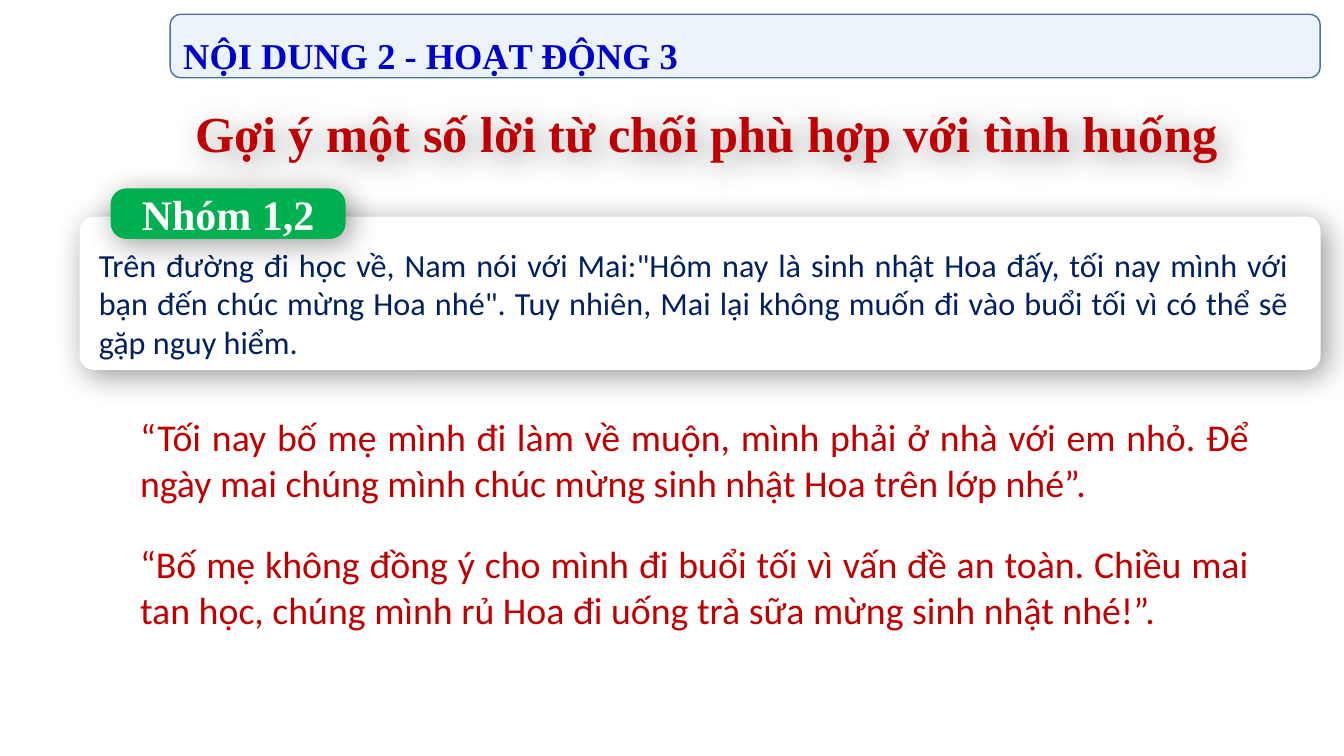
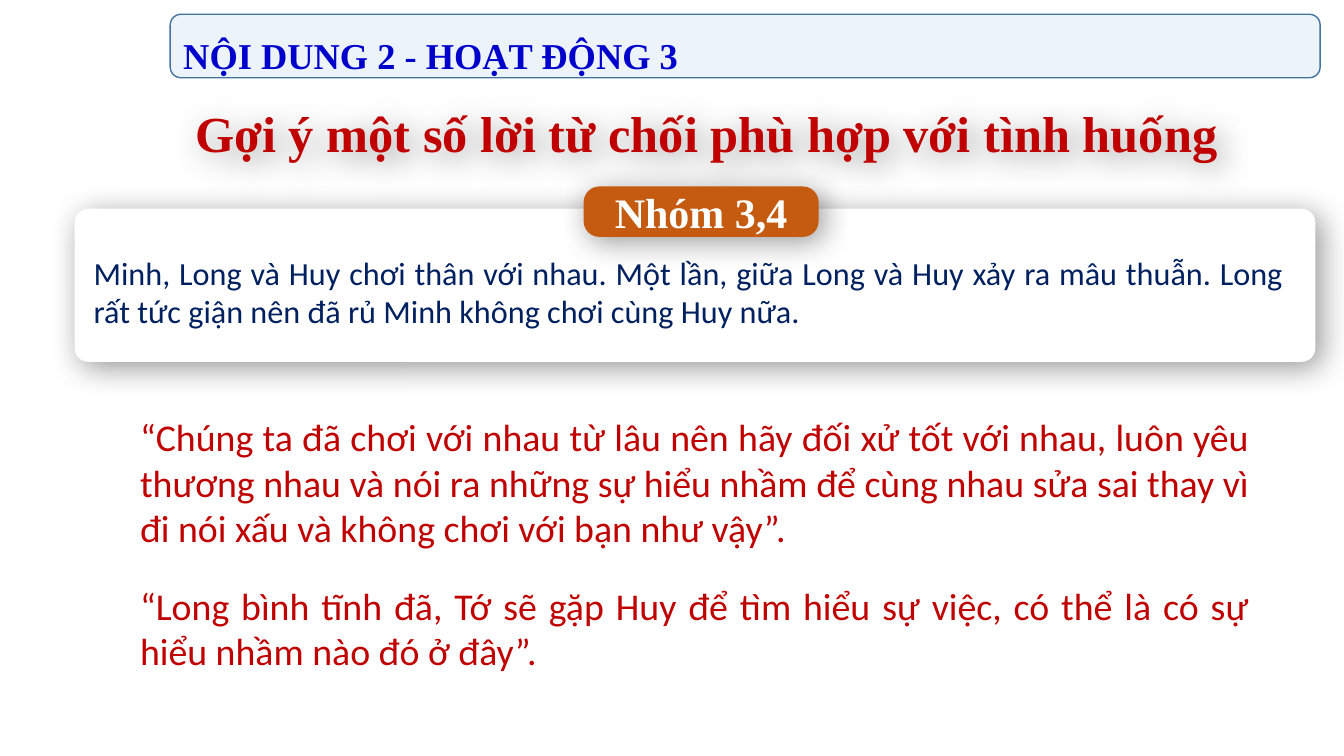
from dataclasses import dataclass

from lxml import etree
from pptx import Presentation
from pptx.dml.color import RGBColor
from pptx.enum.shapes import MSO_SHAPE
from pptx.enum.text import MSO_ANCHOR, MSO_AUTO_SIZE, PP_ALIGN
from pptx.oxml.ns import qn
from pptx.util import Cm, Pt

ROUND = MSO_SHAPE.ROUNDED_RECTANGLE
MIDDLE = MSO_ANCHOR.MIDDLE
TOP = MSO_ANCHOR.TOP
LEFT = PP_ALIGN.LEFT
CENTER = PP_ALIGN.CENTER
FULL = PP_ALIGN.JUSTIFY
GROW = MSO_AUTO_SIZE.SHAPE_TO_FIT_TEXT
FIXED = MSO_AUTO_SIZE.NONE
SERIF = "Times New Roman"
SANS = "Calibri"
COLORS = {
    "band": "ECF3FA", "edge": "43739E", "blue": "0000CC", "red": "C00000",
    "navy": "002060", "white": "FFFFFF", "green": "00B050",
    "orange": "C55A11", "black": "000000",
}


@dataclass(frozen=True)
class Box:
    x: float
    y: float
    w: float
    h: float


@dataclass(frozen=True)
class Style:
    font: str
    size: int
    color: str
    align: PP_ALIGN
    bold: bool = False
    anchor: MSO_ANCHOR = TOP
    fit: MSO_AUTO_SIZE = GROW


@dataclass(frozen=True)
class Reply:
    y: float
    h: float
    text: str


@dataclass(frozen=True)
class Group:
    name: str
    color: str
    tag: tuple[float, float]
    card: tuple[float, float]
    drop: float
    tall: float
    story: str
    replies: tuple[Reply, ...]


HEAD = Style(SERIF, 26, "blue", LEFT, True, MIDDLE, FIXED)
TITLE = Style(SERIF, 36, "red", CENTER, True, MIDDLE, FIXED)
TAG = Style(SERIF, 30, "white", CENTER, True, MIDDLE, FIXED)
STORY = Style(SANS, 23, "navy", FULL)
REPLY = Style(SANS, 27, "red", FULL)

GROUPS = (
    Group(
        "Nhóm 1,2", "green", (2.79, 4.75), (2.01, 5.46), 0.59, 3.2,
        "Trên đường đi học về, Nam nói với Mai:\"Hôm nay là sinh nhật Hoa đấy, "
        "tối nay mình với bạn đến chúc mừng Hoa nhé\". Tuy nhiên, Mai lại không "
        "muốn đi vào buổi tối vì có thể sẽ gặp nguy hiểm.",
        (
            Reply(10.31, 2.57,
                  "“Tối nay bố mẹ mình đi làm về muộn, mình phải ở nhà với em nhỏ. "
                  "Để ngày mai chúng mình chúc mừng sinh nhật Hoa trên lớp nhé”."),
            Reply(13.51, 2.57,
                  "“Bố mẹ không đồng ý cho mình đi buổi tối vì vấn đề an toàn. "
                  "Chiều mai tan học, chúng mình rủ Hoa đi uống trà sữa mừng "
                  "sinh nhật nhé!”."),
        ),
    ),
    Group(
        "Nhóm 3,4", "orange", (14.71, 4.7), (1.88, 5.26), 0.99, 2.24,
        "Minh, Long và Huy chơi thân với nhau. Một lần, giữa Long và Huy xảy ra "
        "mâu thuẫn. Long rất tức giận nên đã rủ Minh không chơi cùng Huy nữa.",
        (
            Reply(10.31, 3.71,
                  "“Chúng ta đã chơi với nhau từ lâu nên hãy đối xử tốt với nhau, "
                  "luôn yêu thương nhau và nói ra những sự hiểu nhầm để cùng nhau "
                  "sửa sai thay vì đi nói xấu và không chơi với bạn như vậy”."),
            Reply(14.55, 2.57,
                  "“Long bình tĩnh đã, Tớ sẽ gặp Huy để tìm hiểu sự việc, "
                  "có thể là có sự hiểu nhầm nào đó ở đây”."),
        ),
    ),
)


def tint(name: str) -> RGBColor:
    return RGBColor.from_string(COLORS[name])


def span(box: Box) -> tuple[Cm, Cm, Cm, Cm]:
    return Cm(box.x), Cm(box.y), Cm(box.w), Cm(box.h)


def write(shape, text: str, style: Style) -> None:
    frame = shape.text_frame
    frame.word_wrap = True
    frame.auto_size = style.fit
    frame.vertical_anchor = style.anchor
    para = frame.paragraphs[0]
    para.alignment = style.align
    run = para.add_run()
    run.text = text
    run.font.name = style.font
    run.font.size = Pt(style.size)
    run.font.bold = style.bold
    run.font.color.rgb = tint(style.color)


def shade(shape) -> None:
    shape.shadow.inherit = False
    effects = shape._element.spPr.find(qn("a:effectLst"))
    outer = etree.SubElement(
        effects, qn("a:outerShdw"), blurRad=str(Pt(22)), dist=str(Pt(5)),
        dir="2700000", algn="tl", rotWithShape="0")
    color = etree.SubElement(outer, qn("a:srgbClr"), val=COLORS["black"])
    etree.SubElement(color, qn("a:alpha"), val="40000")


def panel(slide, box: Box, fill: str, curve: float):
    shape = slide.shapes.add_shape(ROUND, *span(box))
    shape.adjustments[0] = curve
    shape.shadow.inherit = False
    shape.fill.solid()
    shape.fill.fore_color.rgb = tint(fill)
    shape.line.fill.background()
    return shape


def label(slide, box: Box, text: str, style: Style) -> None:
    write(slide.shapes.add_textbox(*span(box)), text, style)


def header(slide) -> None:
    band = panel(slide, Box(4.29, 0.36, 28.98, 1.6), "band", 0.17)
    band.line.color.rgb = tint("edge")
    band.line.width = Pt(1)
    write(band, "NỘI DUNG 2 - HOẠT ĐỘNG 3", HEAD)
    band.text_frame.margin_top = Cm(0.34)
    band.text_frame.paragraphs[0].line_spacing = 1.2
    title = slide.shapes.title
    title.left, title.top, title.width, title.height = span(
        Box(3.63, 2.46, 28.35, 1.75))
    write(title, "Gợi ý một số lời từ chối phù hợp với tình huống", TITLE)
    shade(title)


def build(deck, group: Group) -> None:
    slide = deck.slides.add_slide(deck.slide_layouts[5])
    header(slide)
    for reply in group.replies:
        label(slide, Box(3.28, reply.y, 28.45, reply.h), reply.text, REPLY)
    x, y = group.card
    shade(panel(slide, Box(x, y, 31.27, 3.86), "white", 0.09))
    label(slide, Box(x + 0.23, y + group.drop, 30.53, group.tall),
          group.story, STORY)
    tag = panel(slide, Box(*group.tag, 5.92, 1.27), group.color, 0.31)
    shade(tag)
    write(tag, group.name, TAG)


def main() -> None:
    deck = Presentation()
    deck.slide_width, deck.slide_height = Cm(33.87), Cm(19.05)
    for group in GROUPS:
        build(deck, group)
    deck.save("out.pptx")


if __name__ == "__main__":
    main()
